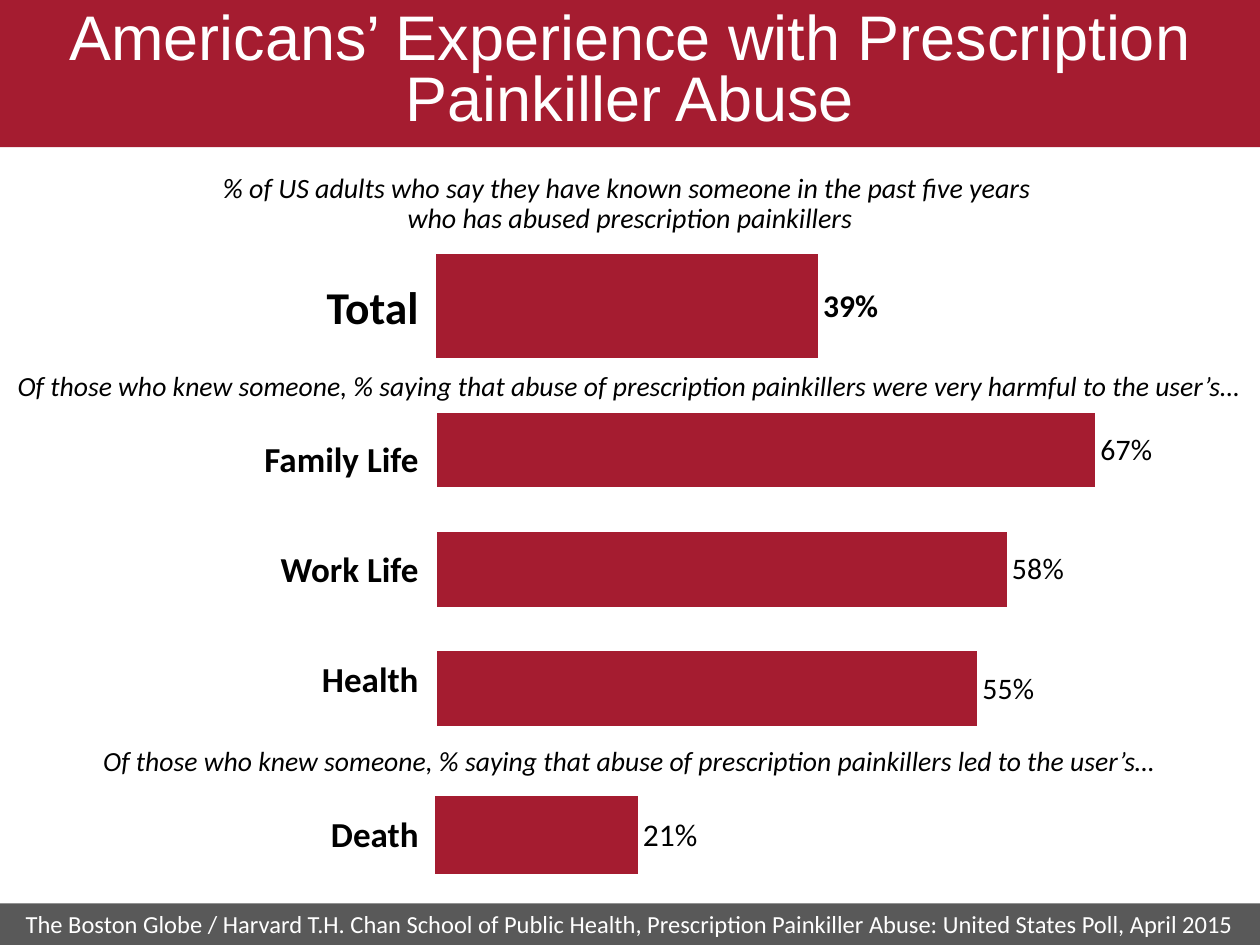
"""Build a poll slide on experience with prescription painkiller abuse."""
from dataclasses import dataclass

from pptx import Presentation
from pptx.chart.data import CategoryChartData
from pptx.dml.color import RGBColor
from pptx.enum.chart import XL_CHART_TYPE, XL_LABEL_POSITION
from pptx.enum.shapes import MSO_SHAPE
from pptx.enum.text import MSO_ANCHOR, PP_ALIGN
from pptx.util import Cm, Pt


@dataclass(frozen=True)
class Theme:
    """Colours, fonts and type sizes of the slide."""
    crimson: RGBColor = RGBColor(0xA5, 0x1C, 0x30)
    grey: RGBColor = RGBColor(0x59, 0x59, 0x59)
    white: RGBColor = RGBColor(0xFF, 0xFF, 0xFF)
    black: RGBColor = RGBColor(0, 0, 0)
    title_font: str = "Arial"
    body_font: str = "Calibri"
    title: float = 36
    title_line: float = 35
    total: float = 26
    label: float = 20
    value: float = 18
    small_value: float = 17
    question: float = 16
    question_line: float = 17
    follow_up: float = 15.8
    source: float = 14


@dataclass(frozen=True)
class Box:
    """A rectangle in centimetres."""
    left: float
    top: float
    width: float
    height: float

    def inner(self, left, top, width, height):
        """Return a box placed relative to this one."""
        return Box(self.left + left, self.top + top, width, height)

    def lengths(self):
        """Return position and size as slide lengths."""
        return Cm(self.left), Cm(self.top), Cm(self.width), Cm(self.height)


THEME = Theme()


def write(frame, text, size, color=THEME.black, align=PP_ALIGN.CENTER,
          font=THEME.body_font, bold=False, italic=False, line=None):
    """Fill a text frame with one styled paragraph."""
    frame.word_wrap = True
    para = frame.paragraphs[0]
    para.text = text
    para.alignment = align
    if line:
        para.line_spacing = Pt(line)
    para.font.name = font
    para.font.size = Pt(size)
    para.font.bold = bold
    para.font.italic = italic
    para.font.color.rgb = color


def add_text(page, box, text, size, **style):
    """Add a text box and return its frame."""
    frame = page.shapes.add_textbox(*box.lengths()).text_frame
    write(frame, text, size, **style)
    return frame


def add_band(page, box, color):
    """Add a plain filled rectangle."""
    band = page.shapes.add_shape(MSO_SHAPE.RECTANGLE, *box.lengths())
    band.shadow.inherit = False
    band.fill.solid()
    band.fill.fore_color.rgb = color
    band.line.fill.background()
    return band


def add_header(page, box, text):
    """Place the title on its crimson band."""
    add_band(page, box, THEME.crimson)
    frame = add_text(page, box.inner(0, 0.2, box.width, 2.54), text, THEME.title,
                     color=THEME.white, font=THEME.title_font,
                     line=THEME.title_line)
    frame.vertical_anchor = MSO_ANCHOR.MIDDLE


def add_footer(page, box, text):
    """Place the source line on its grey band."""
    frame = add_band(page, box, THEME.grey).text_frame
    write(frame, text, THEME.source, color=THEME.white)
    frame.vertical_anchor = MSO_ANCHOR.MIDDLE


def add_bars(page, box, values, top_value, gap, size=THEME.value, bold=False):
    """Add a bar chart without axes, its values listed from the bottom up."""
    data = CategoryChartData(number_format="0%")
    data.categories = [str(number) for number in range(1, len(values) + 1)]
    data.add_series("Series 1", values)
    chart = page.shapes.add_chart(
        XL_CHART_TYPE.BAR_CLUSTERED, *box.lengths(), data).chart
    chart.has_legend = False
    chart.has_title = False
    chart.font.name = THEME.body_font
    chart.font.size = Pt(THEME.value)
    chart.font.color.rgb = THEME.black
    chart.category_axis.visible = False
    chart.value_axis.visible = False
    chart.value_axis.has_major_gridlines = False
    chart.value_axis.minimum_scale = 0
    chart.value_axis.maximum_scale = top_value
    plot = chart.plots[0]
    plot.gap_width = gap
    plot.vary_by_categories = False
    fill = plot.series[0].format.fill
    fill.solid()
    fill.fore_color.rgb = THEME.crimson
    plot.has_data_labels = True
    labels = plot.data_labels
    labels.show_value = True
    labels.position = XL_LABEL_POSITION.OUTSIDE_END
    labels.number_format = "0%"
    labels.number_format_is_linked = False
    labels.font.name = THEME.body_font
    labels.font.size = Pt(size)
    labels.font.bold = bold
    labels.font.color.rgb = THEME.black


def add_labels(page, box, names, size, pitch=0):
    """Stack right-aligned bar names from the top of a box."""
    for row, name in enumerate(names):
        add_text(page, box.inner(0, row * pitch, box.width, box.height), name,
                 size, align=PP_ALIGN.RIGHT, bold=True)


def add_total(page, box):
    """Place the opening question and its single bar."""
    add_bars(page, box.inner(8.48, 0.05, 15.44, 5.44), [0.39], 0.75, 150, bold=True)
    add_text(page, box.inner(0, 0, box.width, 1.47),
             "% of US adults who say they have known someone in the past five years \v"
             "who has abused prescription painkillers",
             THEME.question, italic=True, line=THEME.question_line)
    add_labels(page, box.inner(0.64, 2.11, 8.05, 1.37), ["Total"], THEME.total)


def add_harm(page, box):
    """Place the question on harm and its three bars."""
    add_bars(page, box.inner(8.48, 0.4, 16.51, 7.52), [0.55, 0.58, 0.67], 0.8, 60,
             size=THEME.small_value)
    add_text(page, box.inner(0, 0, box.width, 0.94),
             "Of those who knew someone, % saying that abuse of prescription "
             "painkillers were very harmful to the user’s…",
             THEME.follow_up, italic=True)
    add_labels(page, box.inner(0, 1.37, 8.69, 1.12),
               ["Family Life", "Work Life", "Health"], THEME.label, 2.22)


def add_death(page, box):
    """Place the question on death and its single bar."""
    add_bars(page, box.inner(8.46, 0, 15.24, 4.11), [0.21], 0.75, 150)
    add_text(page, box.inner(0, 0.1, box.width, 0.94),
             "Of those who knew someone, % saying that abuse of prescription "
             "painkillers led to the user’s…",
             THEME.follow_up, italic=True)
    add_labels(page, box.inner(0.64, 1.48, 8.05, 1.12), ["Death"], THEME.label)


def main():
    """Build the slide and save the deck."""
    deck = Presentation()
    deck.slide_width, deck.slide_height = Cm(25.4), Cm(19.05)
    page = deck.slides.add_slide(deck.slide_layouts[6])
    add_header(page, Box(0, 0, 25.4, 2.97),
               "Americans’ Experience with Prescription Painkiller Abuse")
    add_total(page, Box(0, 3.4, 25.4, 3.92))
    add_harm(page, Box(0, 7.32, 25.4, 7.46))
    add_death(page, Box(0, 14.78, 25.4, 3.43))
    add_footer(page, Box(0, 18.21, 25.4, 0.84),
               "The Boston Globe / Harvard T.H. Chan School of Public Health, "
               "Prescription Painkiller Abuse: United States Poll, April 2015")
    deck.save("out.pptx")


if __name__ == "__main__":
    main()
